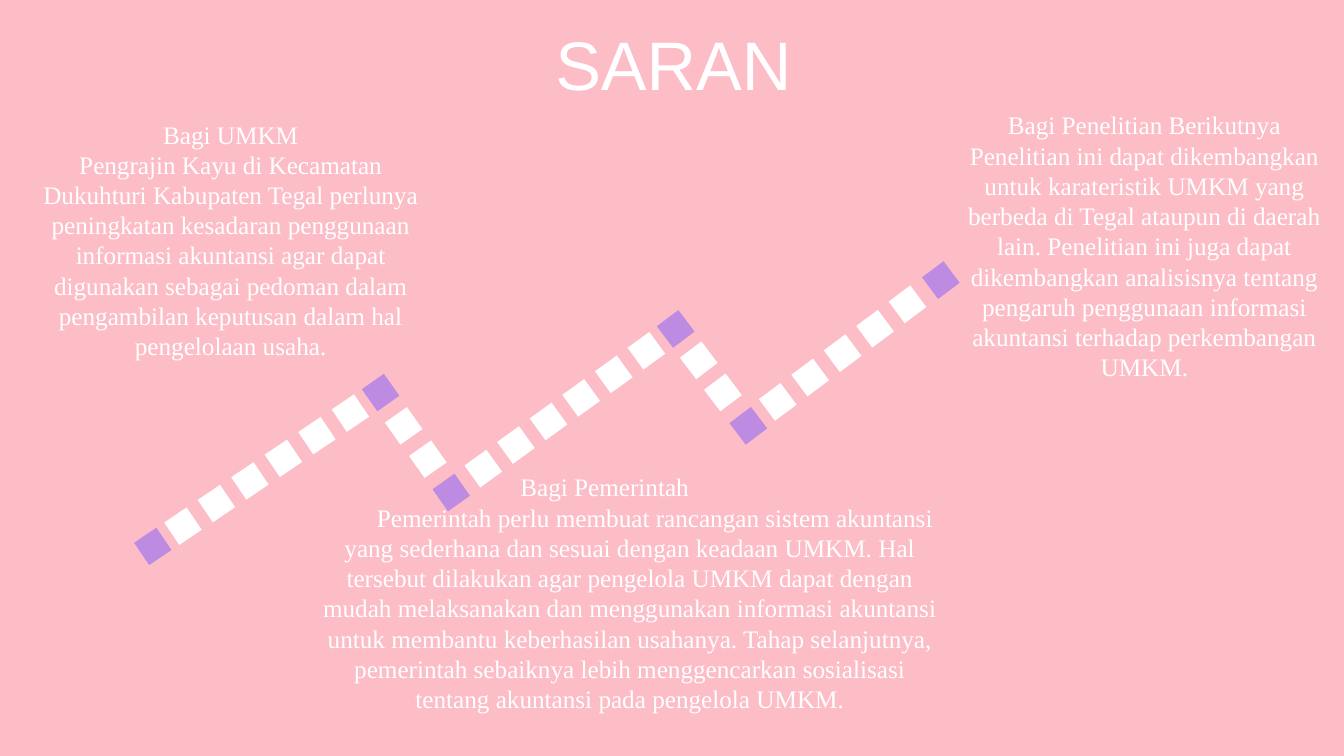
"""Build the SARAN slide: three recommendations around a dotted zigzag path."""
from pptx import Presentation
from pptx.dml.color import RGBColor
from pptx.enum.shapes import MSO_SHAPE as Preset
from pptx.enum.text import MSO_ANCHOR as Anchor, MSO_AUTO_SIZE as AutoSize, PP_ALIGN as Align
from pptx.util import Cm, Pt

COLOURS = {"background": "FDBDC7", "white": "FFFFFF", "marker": "BE8BE2"}
TILE = 0.68

ADVICE = [
    ((0.76, 2.87, 10.11, 7.85), 0, "Bagi UMKM",
     "Pengrajin Kayu di Kecamatan Dukuhturi Kabupaten Tegal perlunya peningkatan "
     "kesadaran penggunaan informasi akuntansi agar dapat digunakan sebagai pedoman "
     "dalam pengambilan keputusan dalam hal pengelolaan usaha."),
    ((6.53, 11.76, 17.42, 8.13), 1.27, "Bagi Pemerintah",
     "Pemerintah perlu membuat rancangan sistem akuntansi yang sederhana dan sesuai "
     "dengan keadaan UMKM. Hal tersebut dilakukan agar pengelola UMKM dapat dengan "
     "mudah melaksanakan dan menggunakan informasi akuntansi untuk membantu "
     "keberhasilan usahanya. Tahap selanjutnya, pemerintah sebaiknya lebih "
     "menggencarkan sosialisasi tentang akuntansi pada pengelola UMKM."),
    ((24.13, 2.64, 9.42, 9.4), 0, "Bagi Penelitian Berikutnya",
     "Penelitian ini dapat dikembangkan untuk karateristik UMKM yang berbeda di Tegal "
     "ataupun di daerah lain. Penelitian ini juga dapat dikembangkan analisisnya "
     "tentang pengaruh penggunaan informasi akuntansi terhadap perkembangan UMKM."),
]

LEGS = [
    (56, [(3.85, 13.77)], (4.61, 13.26), (8.83, 10.41), 6),
    (144.8, [(9.59, 9.89), (11.37, 12.41)], (10.17, 10.73), (10.78, 11.57), 2),
    (54.1, [], (12.18, 11.81), (16.29, 8.84), 6),
    (323, [(17.03, 8.29), (18.86, 10.73)], (17.61, 9.08), (18.22, 9.89), 2),
    (53.3, [(23.71, 7.06)], (19.6, 10.13), (22.87, 7.67), 5),
]


def colour(name):
    """Return the named colour."""
    return RGBColor.from_string(COLOURS[name])


def set_values(target, values):
    """Set each attribute in values on the target."""
    for attribute, value in values.items():
        setattr(target, attribute, value)


def add_frame(slide, box, frame_format):
    """Add a wrapping text box and return its text frame."""
    frame = slide.shapes.add_textbox(*map(Cm, box)).text_frame
    set_values(frame, {"word_wrap": True, **frame_format})
    return frame


def write(paragraph, text, font_name, size, paragraph_format):
    """Write one centred white paragraph."""
    set_values(paragraph, {"alignment": Align.CENTER, **paragraph_format})
    words = paragraph.add_run()
    words.text = text
    set_values(words.font, {"name": font_name, "size": Pt(size)})
    words.font.color.rgb = colour("white")


def add_title(slide):
    """Add the slide heading."""
    frame = add_frame(slide, (0.89, 0.79, 32.16, 2.01), {"vertical_anchor": Anchor.MIDDLE})
    write(frame.paragraphs[0], "SARAN", "Arial", 49,
          {"line_spacing": 0.8, "space_before": Pt(10)})


def add_advice(slide, box, indent, audience, advice):
    """Add one recommendation under its audience."""
    frame = add_frame(slide, box, {"auto_size": AutoSize.SHAPE_TO_FIT_TEXT})
    write(frame.paragraphs[0], audience, "Times New Roman", 18, {})
    body = frame.add_paragraph()
    write(body, advice, "Times New Roman", 18, {})
    if indent:
        properties = body._p.get_or_add_pPr()
        for side in ("marL", "indent"):
            properties.set(side, str(Cm(indent)))


def add_tile(leg, centre, turn, fill):
    """Add one turned square of the path."""
    left, top = (Cm(middle - TILE / 2) for middle in centre)
    tile = leg.shapes.add_shape(Preset.RECTANGLE, left, top, Cm(TILE), Cm(TILE))
    tile.rotation = turn
    tile.shadow.inherit = False
    tile.fill.solid()
    tile.fill.fore_color.rgb = colour(fill)
    tile.line.fill.background()


def add_leg(slide, turn, markers, first, last, count):
    """Add one leg: evenly spaced white squares and its purple markers."""
    leg = slide.shapes.add_group_shape()
    for step in range(count):
        share = step / (count - 1)
        centre = [start + (end - start) * share for start, end in zip(first, last)]
        add_tile(leg, centre, turn, "white")
    for marker in markers:
        add_tile(leg, marker, turn, "marker")


def main():
    """Build and save the slide."""
    deck = Presentation()
    set_values(deck, {"slide_width": Cm(33.87), "slide_height": Cm(19.05)})
    slide = deck.slides.add_slide(deck.slide_layouts[6])
    slide.background.fill.solid()
    slide.background.fill.fore_color.rgb = colour("background")
    add_title(slide)
    for advice in ADVICE:
        add_advice(slide, *advice)
    for leg in LEGS:
        add_leg(slide, *leg)
    deck.save("out.pptx")


if __name__ == "__main__":
    main()
